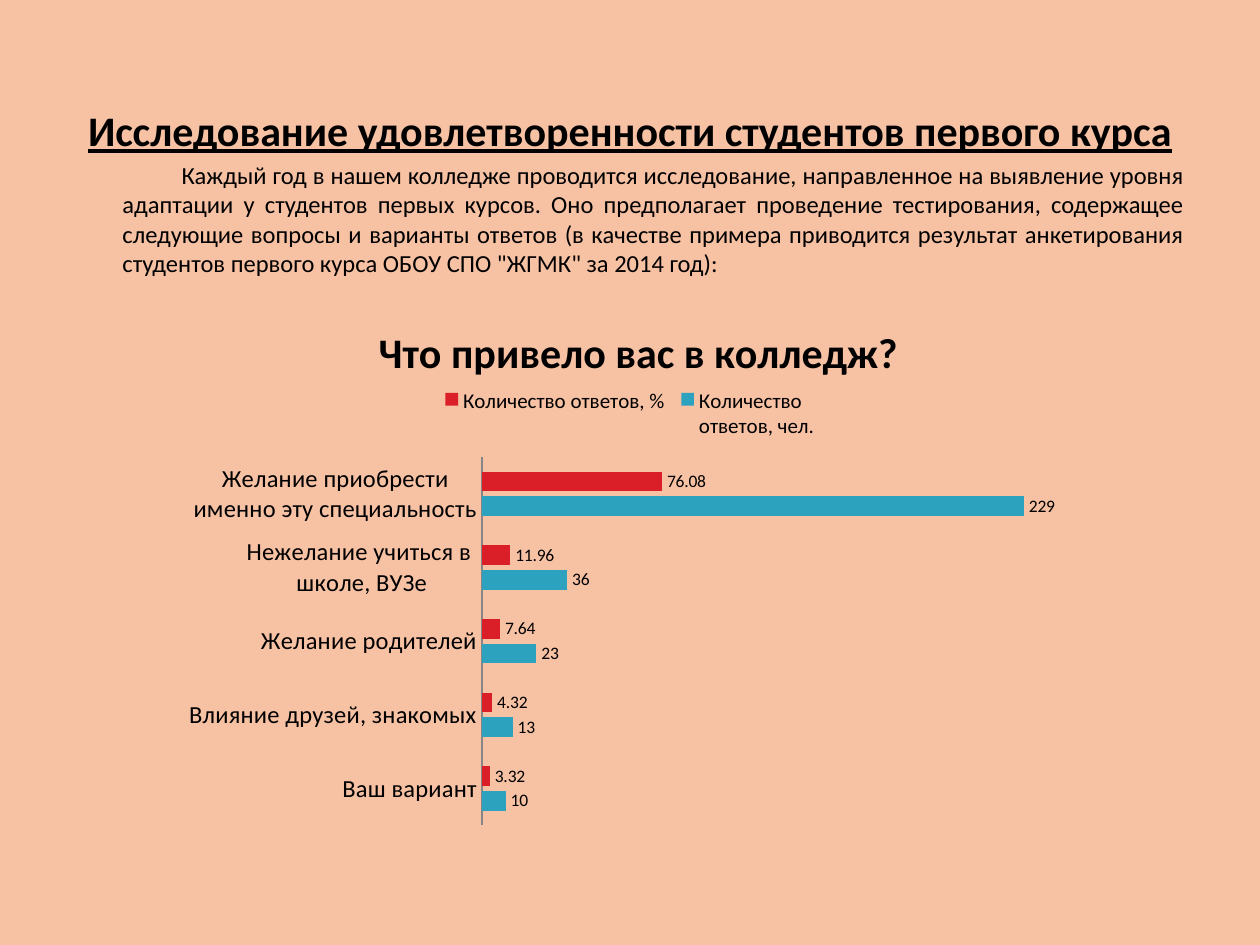
"""Build a slide with a survey introduction and a clustered bar chart of answers."""
import pptx
import pptx.chart.data
import pptx.dml.color
import pptx.enum.chart
import pptx.enum.text
import pptx.oxml
import pptx.oxml.ns
import pptx.util
from pptx.util import Cm

RGBColor = pptx.dml.color.RGBColor
PEACH = RGBColor(0xF7, 0xC1, 0xA4)
BLACK = RGBColor(0, 0, 0)
BLUE = RGBColor(0x2D, 0xA2, 0xBF)
RED = RGBColor(0xDA, 0x1F, 0x28)
GRAY = RGBColor(0x86, 0x86, 0x86)
FONT = "Calibri"

HEADING = "Исследование удовлетворенности студентов первого курса"
INTRO = (
    "Каждый год в нашем колледже проводится исследование, направленное на "
    "выявление уровня адаптации у студентов первых курсов. Оно предполагает "
    "проведение тестирования, содержащее следующие вопросы и варианты ответов "
    "(в качестве примера приводится результат анкетирования студентов первого "
    'курса ОБОУ СПО "ЖГМК" за 2014 год):'
)
QUESTION = "Что привело вас в колледж?"
ANSWERS = [
    "Ваш вариант",
    "Влияние друзей, знакомых",
    "Желание родителей",
    "Нежелание учиться в \nшколе, ВУЗе",
    "Желание приобрести именно эту специальность",
]
SERIES = [
    ("Количество\nответов, чел.", [10, 13, 23, 36, 229], BLUE),
    ("Количество ответов, %", [3.32, 4.32, 7.64, 11.96, 76.08], RED),
]


def style_font(font, size, bold=False):
    font.name = FONT
    font.size = pptx.util.Pt(size)
    font.bold = bold
    font.color.rgb = BLACK


def format_paragraph(p, size, align, bold=False):
    p.alignment = align
    p.space_before = pptx.util.Pt(size * 0.2)
    for r in p.runs:
        style_font(r.font, size, bold)
        r.font.underline = bold


def add_intro(slide):
    sp = slide.shapes.add_textbox(Cm(1.27), Cm(1.98), Cm(22.86), Cm(3.96))
    tf = sp.text_frame
    tf.word_wrap = True
    tf.text = f"{HEADING}\n{INTRO}"
    heading, intro = tf.paragraphs
    align = pptx.enum.text.PP_ALIGN
    format_paragraph(heading, 24, align.CENTER, bold=True)
    format_paragraph(intro, 14, align.JUSTIFY)
    pPr = intro._p.get_or_add_pPr()
    pPr.set("marL", str(Cm(0.95)))
    pPr.set("indent", str(Cm(1.19)))


def set_layout(element, inner=False, **bounds):
    """Place a chart part by fractions of the chart's size."""
    qn = pptx.oxml.ns.qn
    old = element.find(qn("c:layout"))
    if old is not None:
        element.remove(old)
    target = '<c:layoutTarget val="inner"/>' if inner else ""
    modes = "".join(f'<c:{k}Mode val="edge"/>' for k in bounds if k in "xy")
    values = "".join(f'<c:{k} val="{v}"/>' for k, v in bounds.items())
    layout = pptx.oxml.parse_xml(
        f"<c:layout {pptx.oxml.ns.nsdecls('c')}><c:manualLayout>"
        f"{target}{modes}{values}</c:manualLayout></c:layout>"
    )
    overlay = element.find(qn("c:overlay"))
    if overlay is None:
        element.insert(0, layout)
    else:
        overlay.addprevious(layout)


def format_series(series, color):
    series.format.fill.solid()
    series.format.fill.fore_color.rgb = color
    labels = series.data_labels
    labels.show_value = True
    labels.position = pptx.enum.chart.XL_LABEL_POSITION.OUTSIDE_END
    style_font(labels.font, 10)


def format_axes(chart):
    axis = chart.category_axis
    axis.major_tick_mark = pptx.enum.chart.XL_TICK_MARK.NONE
    axis.format.line.color.rgb = GRAY
    style_font(axis.tick_labels.font, 14)
    axis = chart.value_axis
    axis.visible = False
    axis.has_major_gridlines = False
    axis.minimum_scale, axis.maximum_scale = 0, 250


def add_answers_chart(slide):
    data = pptx.chart.data.CategoryChartData()
    data.categories = ANSWERS
    for name, values, _ in SERIES:
        data.add_series(name, values)
    chart = slide.shapes.add_chart(
        pptx.enum.chart.XL_CHART_TYPE.BAR_CLUSTERED,
        Cm(3.38), Cm(5.94), Cm(18.64), Cm(10.92), data,
    ).chart
    style_font(chart.font, 10)

    chart.has_title = True
    tf = chart.chart_title.text_frame
    tf.text = QUESTION
    style_font(tf.paragraphs[0].runs[0].font, 24, bold=True)
    set_layout(chart.chart_title._element, x=0.22, y=0.04)

    chart.has_legend = True
    chart.legend.position = pptx.enum.chart.XL_LEGEND_POSITION.TOP
    chart.legend.include_in_layout = False
    style_font(chart.legend.font, 12)
    set_layout(chart.legend._element, x=0.29, y=0.17, w=0.42, h=0.1)

    plot = chart.plots[0]
    plot.gap_width = 150
    plot.overlap = -25
    plot.vary_by_categories = False
    for series, (_, _, color) in zip(plot.series, SERIES):
        format_series(series, color)
    format_axes(chart)
    set_layout(chart._chartSpace.chart.plotArea, inner=True,
               x=0.34, y=0.3, w=0.64, h=0.68)


def main():
    prs = pptx.Presentation()
    prs.slide_width, prs.slide_height = Cm(25.4), Cm(19.05)
    slide = prs.slides.add_slide(prs.slide_layouts[6])
    slide.background.fill.solid()
    slide.background.fill.fore_color.rgb = PEACH
    add_intro(slide)
    add_answers_chart(slide)
    prs.save("out.pptx")


if __name__ == "__main__":
    main()
